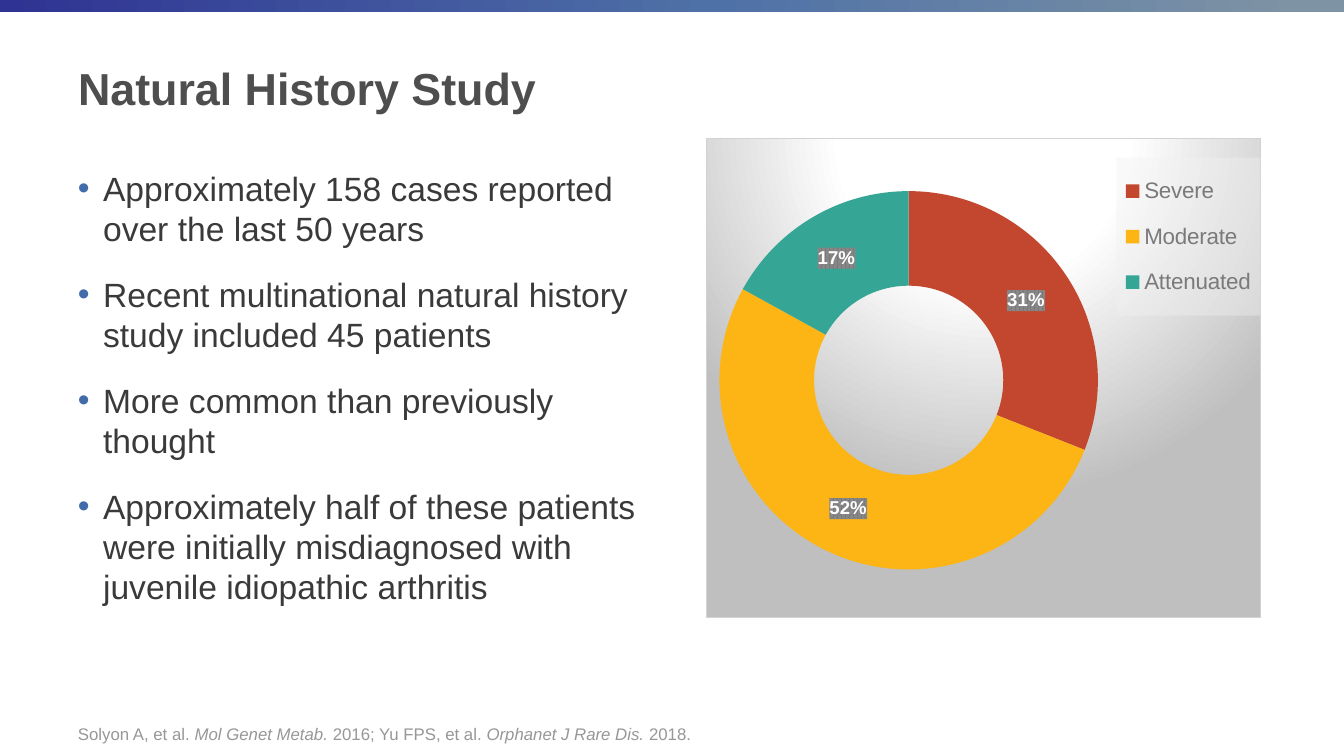
import pptx
import pptx.chart.data
import pptx.dml.color
import pptx.enum.chart
import pptx.enum.shapes
import pptx.enum.text
import pptx.oxml
import pptx.oxml.ns
import pptx.util

PX = 914400 / 100.8
FONT = "Arial"
NAMESPACES = pptx.oxml.ns.nsdecls("a", "c")
BAR_STOPS = [(0, "2F3393"), (53, "4E71A7"), (97, "7E93A4")]
CHART_STOPS = [(0, "FFFFFF"), (39, "FFFFFF"), (100, "BFBFBF")]
FINDINGS = [
    "Approximately 158 cases reported over the last 50 years",
    "Recent multinational natural history study included 45 patients",
    "More common than previously thought",
    "Approximately half of these patients were initially misdiagnosed with "
    "juvenile idiopathic arthritis",
]
CITATION = [
    ("Solyon A, et al. ", False),
    ("Mol Genet Metab. ", True),
    ("2016; Yu FPS, et al. ", False),
    ("Orphanet J Rare Dis. ", True),
    ("2018.", False),
]
SEVERITIES = [
    ("Severe", 31, "C3472E"),
    ("Moderate", 52, "FDB515"),
    ("Attenuated", 17, "35A696"),
]


def px(*lengths):
    """Turn pixel lengths into EMU."""
    return [pptx.util.Emu(round(length * PX)) for length in lengths]


def rgb(code):
    """Turn a hex string into a colour."""
    return pptx.dml.color.RGBColor.from_string(code)


def xml(markup):
    """Build an element from markup, declaring its namespaces."""
    head, mark, rest = markup.partition(">")
    return pptx.oxml.parse_xml(f"{head} {NAMESPACES}{mark}{rest}")


def gradient(stops, direction):
    """Return gradient fill markup for stops given in percent."""
    steps = "".join(
        f'<a:gs pos="{place * 1000}"><a:srgbClr val="{code}"/></a:gs>'
        for place, code in stops
    )
    return f"<a:gradFill><a:gsLst>{steps}</a:gsLst>{direction}</a:gradFill>"


def style_font(font, size, color, bold=False, italic=False):
    """Set the typeface, size, colour and emphasis of a font."""
    font.name = FONT
    font.size = pptx.util.Pt(size)
    font.color.rgb = rgb(color)
    font.bold = bold
    font.italic = italic


def add_text(paragraph, text, **style):
    """Append a formatted run to a paragraph."""
    run = paragraph.add_run()
    run.text = text
    style_font(run.font, **style)


def add_text_frame(slide, box, anchor):
    """Add a wrapping text box and return its frame."""
    frame = slide.shapes.add_textbox(*px(*box)).text_frame
    frame.word_wrap = True
    frame.vertical_anchor = anchor
    return frame


def add_top_bar(slide):
    """Add the gradient band along the top edge."""
    bar = slide.shapes.add_shape(
        pptx.enum.shapes.MSO_SHAPE.RECTANGLE, *px(0, 0, 1344, 12)
    )
    bar.shadow.inherit = False
    bar.line.fill.background()
    bar.fill.background()
    no_fill = bar.element.spPr.find(pptx.oxml.ns.qn("a:noFill"))
    band = xml(gradient(BAR_STOPS, '<a:lin ang="0" scaled="0"/>'))
    bar.element.spPr.replace(no_fill, band)


def set_title(slide, text):
    """Place and format the slide title."""
    title = slide.shapes.title
    title.left, title.top, title.width, title.height = px(68, 22, 1184, 131)
    frame = title.text_frame
    frame.vertical_anchor = pptx.enum.text.MSO_ANCHOR.MIDDLE
    paragraph = frame.paragraphs[0]
    paragraph.alignment = pptx.enum.text.PP_ALIGN.LEFT
    add_text(paragraph, text, size=32, color="4D4E4D", bold=True)


def add_findings(slide, findings):
    """Add the bulleted findings."""
    frame = add_text_frame(
        slide, (68, 163, 605, 520), pptx.enum.text.MSO_ANCHOR.TOP
    )
    for index, finding in enumerate(findings):
        paragraph = frame.add_paragraph() if index else frame.paragraphs[0]
        paragraph.space_before = pptx.util.Pt(18)
        add_text(paragraph, finding, size=24, color="3A3A3A")
        properties = paragraph._p.get_or_add_pPr()
        properties.set("marL", "228600")
        properties.set("indent", "-228600")
        properties.append(
            xml('<a:buClr><a:srgbClr val="416BA9"/></a:buClr>')
        )
        properties.append(xml('<a:buFont typeface="Arial"></a:buFont>'))
        properties.append(xml('<a:buChar char="•"></a:buChar>'))


def add_citation(slide, parts):
    """Add the source line at the foot of the slide."""
    frame = add_text_frame(
        slide, (68, 701, 1184, 48), pptx.enum.text.MSO_ANCHOR.BOTTOM
    )
    for text, italic in parts:
        add_text(
            frame.paragraphs[0], text, size=12, color="979797", italic=italic
        )


def layout(x, y, width, height, target=""):
    """Return a manual chart layout in fractions of the chart."""
    return xml(
        f'<c:layout><c:manualLayout>{target}<c:xMode val="edge"/>'
        f'<c:yMode val="edge"/><c:x val="{x}"/><c:y val="{y}"/>'
        f'<c:w val="{width}"/><c:h val="{height}"/></c:manualLayout></c:layout>'
    )


def replace_layout(parent, position, new_layout):
    """Swap the layout of a chart part for a new one."""
    for old_layout in parent.findall(pptx.oxml.ns.qn("c:layout")):
        parent.remove(old_layout)
    parent.insert(position, new_layout)


def fill_before_text(parent, markup):
    """Give a chart part its fill, ahead of its text properties."""
    text_properties = parent.find(pptx.oxml.ns.qn("c:txPr"))
    text_properties.addprevious(xml(f"<c:spPr>{markup}</c:spPr>"))


def add_severity_chart(slide, severities):
    """Add the doughnut of patients by severity."""
    data = pptx.chart.data.CategoryChartData()
    data.categories = [name for name, _, _ in severities]
    data.add_series("Series 1", [share for _, share, _ in severities])
    chart = slide.shapes.add_chart(
        pptx.enum.chart.XL_CHART_TYPE.DOUGHNUT, *px(706, 138, 555, 480), data
    ).chart
    chart.has_title = False
    style_font(chart.font, 10, "4D4D4D")
    space = chart.element
    radial = (
        '<a:path path="circle"><a:fillToRect l="50000" t="-80000" '
        'r="50000" b="180000"/></a:path>'
    )
    border = (
        '<a:ln w="9525"><a:solidFill><a:srgbClr val="D2D2D2"/>'
        "</a:solidFill></a:ln>"
    )
    fill_before_text(space, gradient(CHART_STOPS, radial) + border)

    chart.has_legend = True
    chart.legend.position = pptx.enum.chart.XL_LEGEND_POSITION.RIGHT
    chart.legend.include_in_layout = False
    style_font(chart.legend.font, 16, "7A7A7A")
    legend = space.xpath("c:chart/c:legend")[0]
    replace_layout(legend, 1, layout(0.74, 0.04, 0.26, 0.33))
    fill_before_text(
        legend,
        '<a:solidFill><a:srgbClr val="F2F2F2"><a:alpha val="39000"/>'
        "</a:srgbClr></a:solidFill>",
    )

    plot = chart.plots[0]
    plot.vary_by_categories = True
    plot_area = space.xpath("c:chart/c:plotArea")[0]
    inner = '<c:layoutTarget val="inner"/>'
    replace_layout(plot_area, 0, layout(0.02, 0.11, 0.69, 0.79, inner))
    space.xpath(".//c:holeSize")[0].set("val", "50")

    series = plot.series[0]
    for index, (_, _, color) in enumerate(severities):
        slice_format = series.points[index].format
        slice_format.fill.solid()
        slice_format.fill.fore_color.rgb = rgb(color)
        slice_format.line.fill.background()
    labels = series.data_labels
    labels.show_value = False
    labels.show_percentage = True
    labels.number_format = "0%"
    labels.number_format_is_linked = False
    style_font(labels.font, 13.3, "FFFFFF", bold=True)
    fill_before_text(
        space.xpath(".//c:ser/c:dLbls")[0],
        '<a:pattFill prst="pct75"><a:fgClr><a:srgbClr val="7A7A7A"/></a:fgClr>'
        '<a:bgClr><a:srgbClr val="898989"/></a:bgClr></a:pattFill>',
    )


def main():
    """Build and save the slide."""
    deck = pptx.Presentation()
    deck.slide_width, deck.slide_height = px(1344, 756)
    slide = deck.slides.add_slide(deck.slide_layouts[5])
    add_top_bar(slide)
    add_citation(slide, CITATION)
    set_title(slide, "Natural History Study")
    add_findings(slide, FINDINGS)
    add_severity_chart(slide, SEVERITIES)
    deck.save("out.pptx")


if __name__ == "__main__":
    main()
